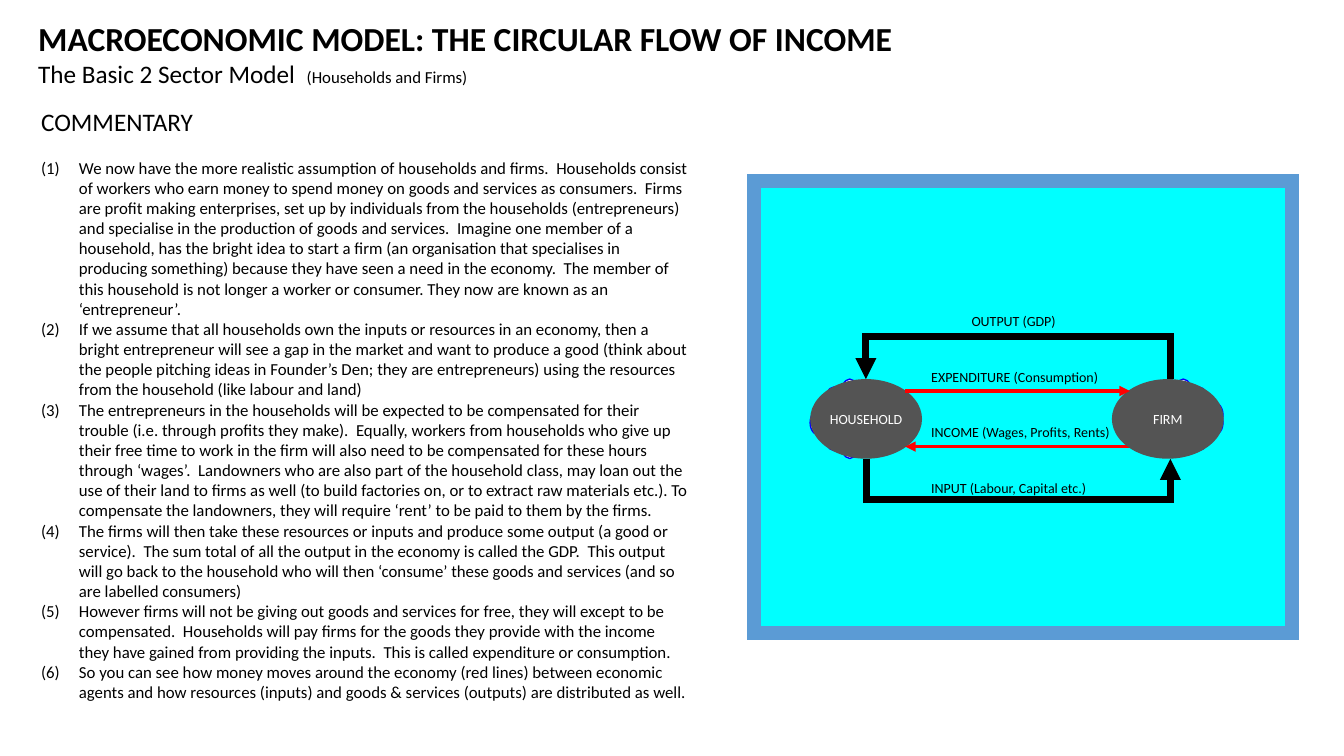
from lxml.etree import SubElement
from pptx import Presentation
from pptx.dml.color import RGBColor
from pptx.enum.shapes import MSO_CONNECTOR, MSO_SHAPE
from pptx.enum.text import MSO_ANCHOR, MSO_AUTO_SIZE, PP_ALIGN
from pptx.oxml.ns import qn
from pptx.util import Pt

TITLE = "MACROECONOMIC MODEL: THE CIRCULAR FLOW OF INCOME"
SUBTITLE = ("The Basic 2 Sector Model  ", "(Households and Firms)")
HEADING = "COMMENTARY"
COMMENTARY = [
    "We now have the more realistic assumption of households and firms.  Households consist of workers who earn "
    "money to spend money on goods and services as consumers.  Firms are profit making enterprises, set up by "
    "individuals from the households (entrepreneurs) and specialise in the production of goods and services.  "
    "Imagine one member of a household, has the bright idea to start a firm (an organisation that specialises in "
    "producing something) because they have seen a need in the economy.  The member of this household is not "
    "longer a worker or consumer. They now are known as an ‘entrepreneur’.",
    "If we assume that all households own the inputs or resources in an economy, then a bright entrepreneur will "
    "see a gap in the market and want to produce a good (think about the people pitching ideas in Founder’s Den; "
    "they are entrepreneurs) using the resources from the household (like labour and land)",
    "The entrepreneurs in the households will be expected to be compensated for their trouble (i.e. through "
    "profits they make).  Equally, workers from households who give up their free time to work in the firm will "
    "also need to be compensated for these hours through ‘wages’.  Landowners who are also part of the household "
    "class, may loan out the use of their land to firms as well (to build factories on, or to extract raw "
    "materials etc.). To compensate the landowners, they will require ‘rent’ to be paid to them by the firms.",
    "The firms will then take these resources or inputs and produce some output (a good or service).  The sum "
    "total of all the output in the economy is called the GDP.  This output will go back to the household who "
    "will then ‘consume’ these goods and services (and so are labelled consumers)",
    "However firms will not be giving out goods and services for free, they will except to be compensated.  "
    "Households will pay firms for the goods they provide with the income they have gained from providing the "
    "inputs.  This is called expenditure or consumption.",
    "So you can see how money moves around the economy (red lines) between economic agents and how resources "
    "(inputs) and goods & services (outputs) are distributed as well.",
]
HOUSEHOLD_MEMBERS = [(1, 6), (0, 4), (2, 7), (1, 1), (2, 0)]
FIRM_MEMBERS = [(6, 4), (4, 6), (5, 6), (4, 0), (6, 3), (5, 1)]

FONT = "Calibri"
HOUSEHOLD_LEFT, FIRM_LEFT, AGENT_TOP = 578.7, 794.2, 270.8
AGENT_WIDTH, AGENT_HEIGHT = 79.9, 56.9
MEMBER_WIDTH, MEMBER_HEIGHT, MEMBER_STEP = 11.34, 17, 5.67
FLOW_LEFT, FLOW_RIGHT, LABEL_LEFT, LABEL_HEIGHT = 646.6, 807.1, 658.1, 19.4
LABEL_RISE = 19.7
ELBOW_CENTRE, ELBOW_SPAN, ELBOW_WIDTH = 727.2, 217.4, 0.12


def colour(value):
    """Return the colour of a hex string."""
    return RGBColor.from_string(value)


def style_runs(paragraph, size, value="000000", bold=False):
    """Give every run of a paragraph its font."""
    for run in paragraph.runs:
        run.font.name = FONT
        run.font.size = Pt(size)
        run.font.bold = bold
        run.font.color.rgb = colour(value)


def add_box(slide, kind, box, fill, line=None, width=1):
    """Add a filled preset shape with an optional outline."""
    shape = slide.shapes.add_shape(kind, *map(Pt, box))
    shape.shadow.inherit = False
    shape.fill.solid()
    shape.fill.fore_color.rgb = colour(fill)
    if line:
        shape.line.color.rgb = colour(line)
        shape.line.width = Pt(width)
        SubElement(shape.line._get_or_add_ln(), qn("a:miter"), lim="800000")
    else:
        shape.line.fill.background()
    return shape


def add_agent(slide, left, name):
    """Add one economic agent as a named ellipse."""
    box = (left, AGENT_TOP, AGENT_WIDTH, AGENT_HEIGHT)
    text_frame = add_box(slide, MSO_SHAPE.OVAL, box, "545454").text_frame
    text_frame.text = name
    text_frame.word_wrap = False
    text_frame.vertical_anchor = MSO_ANCHOR.MIDDLE
    text_frame.paragraphs[0].alignment = PP_ALIGN.CENTER
    style_runs(text_frame.paragraphs[0], 10, "FFFFFF")


def add_text(slide, box, text, wrap=False):
    """Add a text box and return its text frame."""
    text_frame = slide.shapes.add_textbox(*map(Pt, box)).text_frame
    text_frame.text = text
    text_frame.word_wrap = wrap
    text_frame.auto_size = MSO_AUTO_SIZE.SHAPE_TO_FIT_TEXT
    return text_frame


def add_label(slide, left, top, width, text):
    """Add the label of a flow."""
    text_frame = add_text(slide, (left, top, width, LABEL_HEIGHT), text)
    style_runs(text_frame.paragraphs[0], 10)


def add_arrow(slide, kind, points, value, width):
    """Add a connector with an arrowhead at its end."""
    connector = slide.shapes.add_connector(kind, *map(Pt, points))
    connector.line.color.rgb = colour(value)
    connector.line.width = Pt(width)
    line = connector.line._get_or_add_ln()
    SubElement(line, qn("a:miter"), lim="800000")
    SubElement(line, qn("a:tailEnd"), type="triangle")
    SubElement(connector._element.spPr, qn("a:effectLst"))
    return connector


def add_money_flow(slide, start, end, y, width, text):
    """Add a red arrow between the agents with its label."""
    add_arrow(slide, MSO_CONNECTOR.STRAIGHT, (start, y, end, y), "FF0000", 2.5)
    add_label(slide, LABEL_LEFT, y - LABEL_RISE, width, text)


def add_goods_flow(slide, y, rise, label):
    """Add a black bent arrow that leaves the agents by the given rise."""
    half = ELBOW_SPAN / 2 if rise > 0 else -ELBOW_SPAN / 2
    points = (ELBOW_CENTRE + ELBOW_WIDTH, y + half, ELBOW_CENTRE, y - half)
    connector = add_arrow(slide, MSO_CONNECTOR.ELBOW, points, "000000", 5)
    properties = connector._element.spPr
    properties.find(qn("a:xfrm")).set("rot", str(270 * 60000))
    adjustments = properties.find(qn("a:prstGeom")).get_or_add_avLst()
    bend = round(-rise / ELBOW_WIDTH * 100000)
    SubElement(adjustments, qn("a:gd"), name="adj1", fmla=f"val {bend}")
    add_label(slide, *label)


def add_title(slide):
    """Add the title and the subtitle."""
    text_frame = add_text(slide, (20.2, 9.4, 630.7, 58.3), TITLE)
    style_runs(text_frame.paragraphs[0], 24, bold=True)
    paragraph = text_frame.add_paragraph()
    for text in SUBTITLE:
        paragraph.add_run().text = text
    style_runs(paragraph, 18)
    paragraph.runs[1].font.size = Pt(12)


def add_commentary(slide):
    """Add the heading and the numbered commentary."""
    text_frame = add_text(slide, (22.3, 72.7, 477.4, 450.7), HEADING, wrap=True)
    style_runs(text_frame.paragraphs[0], 18)
    text_frame.paragraphs[0].space_after = Pt(14.6)
    for text in COMMENTARY:
        paragraph = text_frame.add_paragraph()
        paragraph.text = text
        style_runs(paragraph, 12)
        properties = paragraph._p.get_or_add_pPr()
        properties.set("marL", str(Pt(27)))
        properties.set("indent", str(-Pt(27)))
        SubElement(properties, qn("a:buFont"), typeface=FONT)
        SubElement(properties, qn("a:buAutoNum"), type="arabicParenBoth")


def main():
    """Build the circular flow slide."""
    presentation = Presentation()
    presentation.slide_width, presentation.slide_height = Pt(960), Pt(540)
    slide = presentation.slides.add_slide(presentation.slide_layouts[6])
    add_box(slide, MSO_SHAPE.RECTANGLE, (538.6, 129.2, 384.5, 323.3), "00FFFF", "5B9BD5", 10)
    for left, members in ((HOUSEHOLD_LEFT, HOUSEHOLD_MEMBERS), (FIRM_LEFT, FIRM_MEMBERS)):
        for column, row in members:
            box = (left + column * MEMBER_WIDTH, AGENT_TOP + row * MEMBER_STEP, MEMBER_WIDTH, MEMBER_HEIGHT)
            add_box(slide, MSO_SHAPE.OVAL, box, "FFFFFF", "0000FF")
    add_agent(slide, HOUSEHOLD_LEFT, "HOUSEHOLD")
    add_money_flow(slide, FLOW_RIGHT, FLOW_LEFT, 319, 149.8, "INCOME (Wages, Profits, Rents)")
    add_agent(slide, FIRM_LEFT, "FIRM")
    add_money_flow(slide, FLOW_LEFT, FLOW_RIGHT, 279.3, 135.4, "EXPENDITURE (Consumption)")
    add_goods_flow(slide, AGENT_TOP, 32.4, (686.9, 219.6, 74.9, "OUTPUT (GDP)"))
    add_goods_flow(slide, AGENT_TOP + AGENT_HEIGHT, -31, (LABEL_LEFT, 339.1, 127.4, "INPUT (Labour, Capital etc.)"))
    add_title(slide)
    add_commentary(slide)
    presentation.save("out.pptx")


if __name__ == "__main__":
    main()
